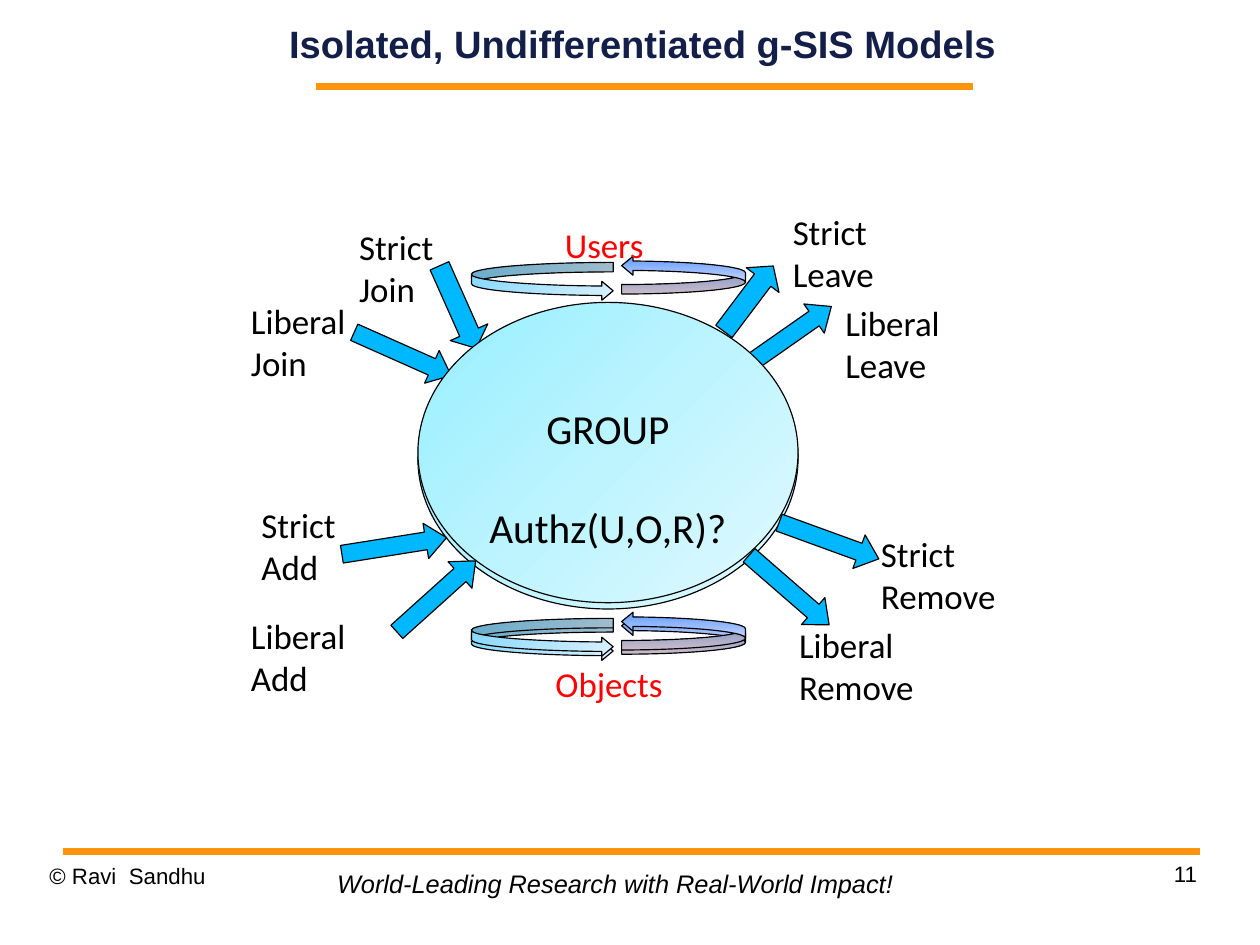
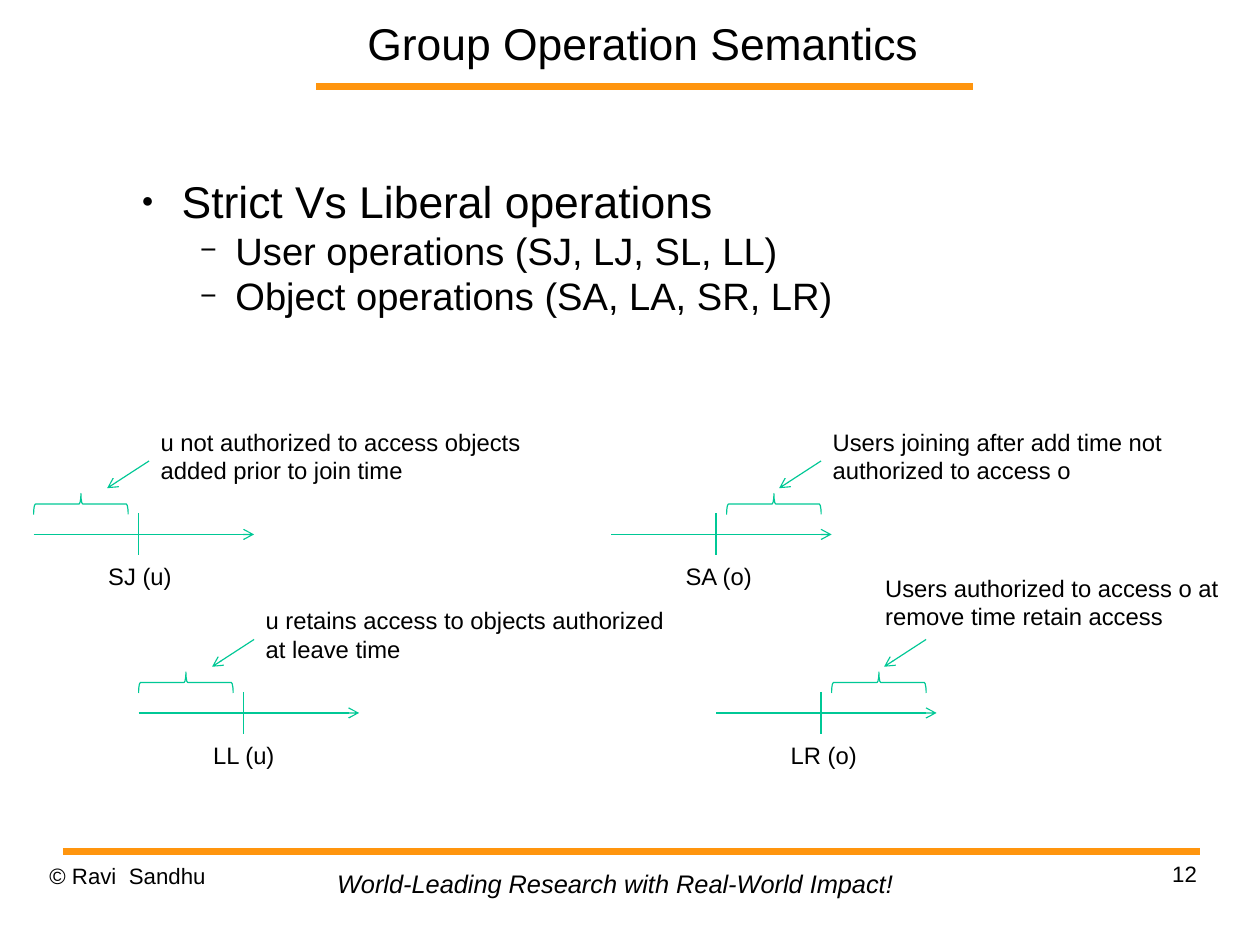
from lxml.etree import SubElement
from pptx import Presentation
from pptx.dml.color import RGBColor
from pptx.enum.shapes import MSO_CONNECTOR, MSO_SHAPE
from pptx.enum.text import MSO_ANCHOR, MSO_AUTO_SIZE, PP_ALIGN
from pptx.oxml.ns import qn
from pptx.util import Cm, Inches, Pt

WIDTH, HEIGHT = Cm(28), Cm(21)
COL, ROW = WIDTH / 12, HEIGHT / 9
PAD = (0.11, 0.05)

BLACK = RGBColor(0x00, 0x00, 0x00)
NAVY = RGBColor(0x13, 0x1F, 0x49)
ORANGE = RGBColor(0xFF, 0x95, 0x0E)
RED = RGBColor(0xFF, 0x00, 0x00)
SKY = RGBColor(0x00, 0xB8, 0xFF)
GREEN = RGBColor(0x00, 0xC8, 0x96)
GROUP_FILL = (RGBColor(0xE0, 0xF9, 0xFF), RGBColor(0x98, 0xEF, 0xFF), 135)
OUT_FILL = (RGBColor(0xDA, 0xF1, 0xFF), RGBColor(0x80, 0xD7, 0xFF), 135)
BACK_FILL = (RGBColor(0x5E, 0x9E, 0xFF), RGBColor(0xFF, 0xEB, 0xFA), 90)

ARROWS = [
    (3.65, 5.51, 1.01, 0.34, 318, 0.59),
    (7.01, 5.45, 1.01, 0.34, 41, 0.59),
    (6.74, 2.65, 0.78, 0.39, 307, 0.43),
    (3.33, 3.2, 1.01, 0.34, 24, 0.59),
    (3.93, 2.73, 0.86, 0.39, 66, 0.43),
    (7.09, 3.01, 0.91, 0.34, 325, 0.59),
    (3.25, 5.03, 1.01, 0.34, 351, 0.59),
    (7.39, 4.98, 1.01, 0.34, 20, 0.59),
]
LABELS = [
    ("Strict Join", 3.31, 2.1, 1.18),
    ("Liberal Join", 2.28, 2.8, 1.18),
    ("Strict Leave", 7.44, 1.96, 1.18),
    ("Liberal Leave", 7.94, 2.82, 1.18),
    ("Strict Add", 2.38, 4.75, 1.35),
    ("Liberal Add", 2.28, 5.8, 1.35),
    ("Strict Remove", 8.28, 5.02, 1.51),
    ("Liberal Remove", 7.5, 5.89, 1.51),
]


def cells(x, y, w, h):
    """Turn grid columns and rows into lengths."""
    return int(x * COL), int(y * ROW), int(w * COL), int(h * ROW)


def style(p, size, font="Arial", color=BLACK, bold=False, italic=False):
    """Format every run of a paragraph."""
    for r in p.runs:
        r.font.name, r.font.size = font, Pt(size)
        r.font.bold, r.font.italic = bold, italic
        r.font.color.rgb = color


def set_pad(tf, pad):
    """Set the horizontal and vertical margins of a text frame."""
    tf.margin_left = tf.margin_right = int(pad[0] * COL)
    tf.margin_top = tf.margin_bottom = int(pad[1] * ROW)


def add_text(s, text, box, size, align=PP_ALIGN.LEFT, pad=PAD, **font):
    """Add a wrapping text box."""
    sp = s.shapes.add_textbox(*cells(*box))
    tf = sp.text_frame
    tf.word_wrap = True
    set_pad(tf, pad)
    tf.text = text
    p = tf.paragraphs[0]
    p.alignment = align
    style(p, size, **font)
    return sp


def add_line(s, start, end, color, width=0.75, arrow=False):
    """Add a straight line, with an open arrowhead at its end if asked."""
    c = s.shapes.add_connector(MSO_CONNECTOR.STRAIGHT, *cells(*start, *end))
    c.line.color.rgb, c.line.width = color, Pt(width)
    spPr = c.element.spPr
    if arrow:
        SubElement(spPr.find(qn("a:ln")), qn("a:tailEnd"), type="arrow")
    SubElement(spPr, qn("a:effectLst"))
    return c


def add_preset(s, kind, box, fill=None, line=BLACK, rotation=0, adjust=()):
    """Add a preset shape with no fill, a plain fill or a gradient."""
    sp = s.shapes.add_shape(kind, *cells(*box))
    sp.shadow.inherit = False
    sp.rotation = rotation
    sp.line.color.rgb, sp.line.width = line, Pt(0.75)
    for i, value in enumerate(adjust):
        sp.adjustments[i] = value
    if fill is None:
        sp.fill.background()
    elif isinstance(fill, RGBColor):
        sp.fill.solid()
        sp.fill.fore_color.rgb = fill
    else:
        sp.fill.gradient()
        sp.fill.gradient_angle = fill[2]
        for stop, color in zip(sp.fill.gradient_stops, fill):
            stop.color.rgb = color
    return sp


def move_to_master(prs, s):
    """Draw the shared rules and footer texts and move them to the master."""
    shared = [
        add_line(s, (3.01, 0.82), (9.27, 0.82), ORANGE, 4.31),
        add_line(s, (0.6, 8.11), (11.43, 8.11), ORANGE, 4.31),
        add_text(s, "© Ravi  Sandhu", (0.47, 8.21, 2.8, 0.62), 14, pad=(0, 0)),
        add_text(s, "World-Leading Research with Real-World Impact!",
                 (3.1, 8.22, 5.6, 0.4), 16, italic=True),
    ]
    for number, sp in enumerate(shared, 101):
        sp.element.xpath(".//p:cNvPr")[0].set("id", str(number))
        prs.slide_master.shapes.element.append(sp.element)


def add_slide(prs, layout, title, number, size, **font):
    """Add a slide with its title and page number."""
    s = prs.slides.add_slide(prs.slide_layouts[layout])
    sp = s.shapes.title
    sp.left, sp.top, sp.width, sp.height = cells(2.62, 0, 7, 0.82)
    tf = sp.text_frame
    tf.text = title
    tf.auto_size = MSO_AUTO_SIZE.NONE
    tf.vertical_anchor = MSO_ANCHOR.MIDDLE
    set_pad(tf, (0, 0))
    tf.paragraphs[0].alignment = PP_ALIGN.CENTER
    style(tf.paragraphs[0], size, **font)
    add_text(s, str(number), (8.6, 8.19, 2.8, 0.62), 14, PP_ALIGN.RIGHT, (0, 0))
    return s


def add_orbit(s, y):
    """Add a pair of curved arrows that circle each other."""
    adjust = (0.25, 0.5, 0.3)
    add_preset(s, MSO_SHAPE.CURVED_RIGHT_ARROW, (4.49, y, 1.35, 0.36),
               OUT_FILL, adjust=adjust)
    add_preset(s, MSO_SHAPE.CURVED_RIGHT_ARROW, (5.92, y - 0.06, 1.18, 0.36),
               BACK_FILL, rotation=180, adjust=adjust)


def add_group(s):
    """Add the group ellipse with its two lines of text."""
    sp = add_preset(s, MSO_SHAPE.OVAL, (3.98, 2.88, 3.62, 2.86), GROUP_FILL)
    tf = sp.text_frame
    tf.word_wrap = True
    tf.vertical_anchor = MSO_ANCHOR.TOP
    set_pad(tf, PAD)
    tf.margin_top = int(0.54 * ROW)
    tf.text = "GROUP\nAuthz(U,O,R)?"
    for p in tf.paragraphs:
        p.alignment = PP_ALIGN.CENTER
        style(p, 26, "Calibri")
    tf.paragraphs[1].space_before = Pt(31)


def add_bullet(p, char, percent, indent, hang):
    """Give a paragraph a hanging bullet, with its indents in inches."""
    pPr = p._p.get_or_add_pPr()
    pPr.set("marL", str(Inches(indent)))
    pPr.set("indent", str(-Inches(hang)))
    SubElement(SubElement(pPr, qn("a:buClr")), qn("a:srgbClr"), val=str(BLACK))
    SubElement(pPr, qn("a:buSzPct"), val=str(percent * 1000))
    SubElement(pPr, qn("a:buFont"), typeface="Arial")
    SubElement(pPr, qn("a:buChar"), char=char)


def fill_body(s, items):
    """Fill the body placeholder with (level, text) items."""
    levels = [("●", 45, 0.47, 0.35, 28), ("−", 75, 0.94, 0.31, 24)]
    sp = s.placeholders[1]
    sp.left, sp.top, sp.width, sp.height = cells(1.11, 1.6, 10.2, 2.39)
    tf = sp.text_frame
    tf.text = "\n".join(text for _, text in items)
    tf.auto_size = MSO_AUTO_SIZE.NONE
    for p, (level, _) in zip(tf.paragraphs, items):
        *bullet, size = levels[level]
        p.level = level
        add_bullet(p, *bullet)
        p.space_before = Pt(0)
        style(p, size)


def add_timeline(s, x, y, label, note, width, after=False, shift=(0, 0)):
    """Add a time axis with an event tick, a braced span and a note."""
    brace, tip = (1.55, 1.6) if after else (0.45, 0.7)
    add_line(s, (x, y), (x + 2.1, y), GREEN, arrow=True)
    add_line(s, (x + 1, y - 0.2), (x + 1, y + 0.2), GREEN)
    add_text(s, label, (x + 0.6, y + 0.21, 1, 0.4), 15)
    add_preset(s, MSO_SHAPE.LEFT_BRACE, (x + brace - 0.1, y - 0.74, 0.2, 0.9),
               line=GREEN, rotation=90)
    add_line(s, (x + tip + 0.4, y - 0.7), (x + tip, y - 0.44), GREEN, arrow=True)
    add_text(s, note, (x + tip + 0.4 + shift[0], y - 1.07 + shift[1], width, 0.69), 15)


def build_models(prs):
    """Build the slide of the group and its eight operations."""
    s = add_slide(prs, 5, "Isolated, Undifferentiated g-SIS Models", 11, 24,
                  color=NAVY, bold=True)
    move_to_master(prs, s)
    add_preset(s, MSO_SHAPE.OVAL, (3.98, 2.94, 3.62, 2.86), GROUP_FILL)
    for y in (2.5, 5.93, 5.89):
        add_orbit(s, y)
    for *box, rotation, head in ARROWS:
        add_preset(s, MSO_SHAPE.RIGHT_ARROW, box, SKY, rotation=rotation,
                   adjust=(0.5, head))
    for text, x, y, w in LABELS:
        add_text(s, text, (x, y, w, 0.94), 22, font="Calibri")
    for text, x, y in (("Users", 5.27, 2.08), ("Objects", 5.18, 6.26)):
        add_text(s, text, (x, y, 1.43, 0.52), 22, font="Calibri", color=RED)
    add_group(s)


def build_semantics(prs):
    """Build the slide of operation semantics and timelines."""
    s = add_slide(prs, 1, "Group Operation Semantics", 12, 28)
    fill_body(s, [(0, "Strict Vs Liberal operations"),
                  (1, "User operations (SJ, LJ, SL, LL)"),
                  (1, "Object operations (SA, LA, SR, LR)")])
    upper, lower = 5.09, 6.79
    add_timeline(s, 0.32, upper, "SJ (u)",
                 "u not authorized to access objects added prior to join time", 4.2)
    add_timeline(s, 5.82, upper, "SA (o)",
                 "Users joining after add time not authorized to access o", 3.6, True)
    add_timeline(s, 1.32, lower, "LL (u)",
                 "u retains access to objects authorized at leave time", 4.2)
    add_timeline(s, 6.82, lower, "LR (o)",
                 "Users authorized to access o at remove time retain access", 3.6,
                 True, (-0.5, -0.31))


def main():
    """Build and save the presentation."""
    prs = Presentation()
    prs.slide_width, prs.slide_height = WIDTH, HEIGHT
    prs.element.find(qn("p:sldSz")).attrib.pop("type", None)
    build_models(prs)
    build_semantics(prs)
    prs.save("out.pptx")


if __name__ == "__main__":
    main()
